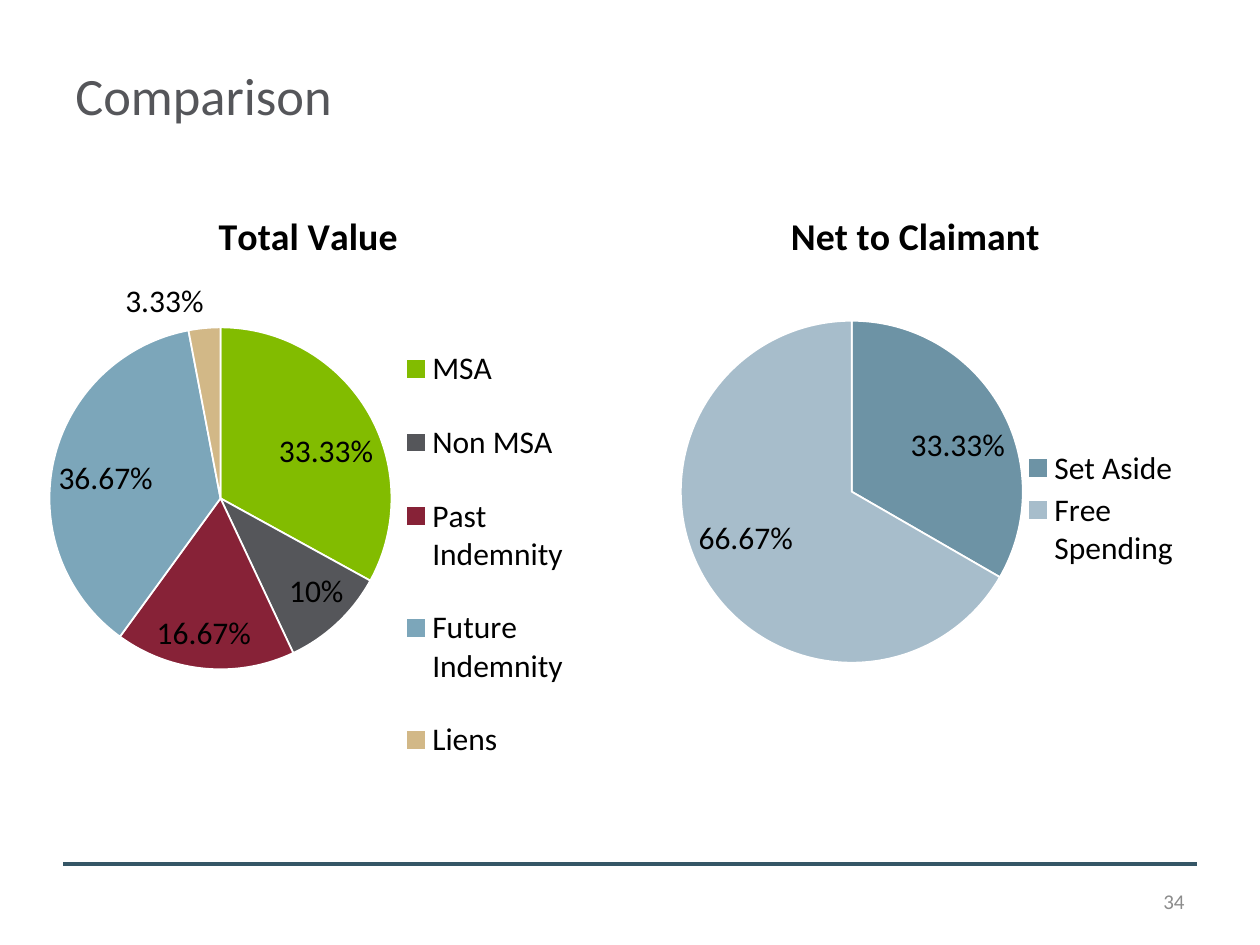
"""Build a slide that compares two settlement pies."""
import pptx
import pptx.chart.data
import pptx.dml.color
import pptx.enum.chart
import pptx.enum.shapes
import pptx.enum.text
import pptx.oxml
import pptx.oxml.ns
import pptx.util

WIDTH, HEIGHT = 10, 7.5
MARGIN = 0.5
FONT = "Calibri"
BEST_FIT = pptx.enum.chart.XL_LABEL_POSITION.BEST_FIT
TEXTS = [
    ("Comparison", (MARGIN, 0.3, WIDTH - 2 * MARGIN, 0.9), 30, "55565A", "LEFT"),
    ("34", (7.17, 6.95, 2.33, 0.4), 12, "8C8C8C", "RIGHT"),
]
PIES = [
    {
        "title": "Net to Claimant",
        "frame": (5.01, 1.45, 4.49, 5.22),
        "slices": [
            ("Set Aside", 0.3333, "6D93A5", None),
            ("Free Spending", 0.6667, "A7BDCB", None),
        ],
        "format": "0.00%",
        "title_layout": (0.27, 0.03),
        "plot_layout": (0.05, 0.21, 0.68, 0.52),
        "legend_layout": (0.7, 0.4, 0.26, 0.19),
    },
    {
        "title": "Total Value",
        "frame": (0.16, 1.45, 4.61, 5.22),
        "slices": [
            ("MSA", 33, "82BC00", "33.33%"),
            ("Non MSA", 10, "55565A", None),
            ("Past Indemnity", 17, "872237", "16.67%"),
            ("Future Indemnity", 37, "7CA6BA", "36.67%"),
            ("Liens", 3, "D2B887", "3.33%"),
        ],
        "format": '0"%"',
        "title_layout": (0.33, 0.03),
        "plot_layout": (0.04, 0.22, 0.61, 0.52),
        "legend_layout": (0.64, 0.2, 0.32, 0.73),
    },
]


def color(value):
    """Turn a hex string into a colour."""
    return pptx.dml.color.RGBColor.from_string(value)


def inches(values):
    """Convert several lengths in inches."""
    return [pptx.util.Inches(value) for value in values]


def set_font(font, size, value="000000", bold=False):
    """Set face, size, colour and weight of a font."""
    font.name = FONT
    font.size = pptx.util.Pt(size)
    font.bold = bold
    font.color.rgb = color(value)


def add_text(page, text, frame, size, value, alignment):
    """Add a one-line text box, centred vertically."""
    text_frame = page.shapes.add_textbox(*inches(frame)).text_frame
    text_frame.word_wrap = True
    text_frame.vertical_anchor = pptx.enum.text.MSO_ANCHOR.MIDDLE
    paragraph = text_frame.paragraphs[0]
    paragraph.text = text
    paragraph.alignment = getattr(pptx.enum.text.PP_ALIGN, alignment)
    set_font(paragraph.font, size, value)


def set_layout(chart, tag, index, shares, inner=False):
    """Place a chart part by shares of the chart's size."""
    part = chart.element.find(".//" + pptx.oxml.ns.qn(tag))
    for old in part.findall(pptx.oxml.ns.qn("c:layout")):
        part.remove(old)
    target = '<c:layoutTarget val="inner"/>' if inner else ""
    modes = '<c:xMode val="edge"/><c:yMode val="edge"/>'
    sizes = "".join(f'<c:{name} val="{share}"/>' for name, share in zip("xywh", shares))
    part.insert(index, pptx.oxml.parse_xml(
        f"<c:layout {pptx.oxml.ns.nsdecls('c')}><c:manualLayout>"
        f"{target}{modes}{sizes}</c:manualLayout></c:layout>"))


def style_slice(point, fill, text):
    """Colour a slice and give it its own label text, if any."""
    point.format.fill.solid()
    point.format.fill.fore_color.rgb = color(fill)
    point.format.line.color.rgb = color("FFFFFF")
    point.format.line.width = pptx.util.Pt(1)
    if text:
        paragraph = point.data_label.text_frame.paragraphs[0]
        paragraph.text = text
        set_font(paragraph.runs[0].font, 18)
        point.data_label.position = BEST_FIT


def add_pie(page, pie):
    """Add a pie chart with title, labels and legend."""
    names, values, fills, texts = zip(*pie["slices"])
    chart_data = pptx.chart.data.CategoryChartData()
    chart_data.categories = names
    chart_data.add_series(pie["title"], values)
    chart = page.shapes.add_chart(
        pptx.enum.chart.XL_CHART_TYPE.PIE, *inches(pie["frame"]), chart_data).chart
    set_font(chart.font, 18)

    chart.has_title = True
    paragraph = chart.chart_title.text_frame.paragraphs[0]
    paragraph.text = pie["title"]
    set_font(paragraph.font, 21.6, bold=True)
    chart.has_legend = True
    chart.legend.position = pptx.enum.chart.XL_LEGEND_POSITION.RIGHT
    chart.legend.include_in_layout = False
    set_font(chart.legend.font, 18)

    plot = chart.plots[0]
    plot.vary_by_categories = True
    series = plot.series[0]
    labels = series.data_labels
    labels.show_value = True
    labels.number_format = pie["format"]
    labels.number_format_is_linked = False
    labels.position = BEST_FIT
    set_font(labels.font, 18)
    for index, (fill, text) in enumerate(zip(fills, texts)):
        style_slice(series.points[index], fill, text)

    set_layout(chart, "c:title", 1, pie["title_layout"])
    set_layout(chart, "c:plotArea", 0, pie["plot_layout"], inner=True)
    set_layout(chart, "c:legend", 1, pie["legend_layout"])


def add_rule(page):
    """Draw the footer line between the margins."""
    rule = page.shapes.add_connector(
        pptx.enum.shapes.MSO_CONNECTOR.STRAIGHT,
        *inches((MARGIN, 6.86, WIDTH - MARGIN, 6.86)))
    rule.line.color.rgb = color("355666")
    rule.line.width = pptx.util.Pt(2.25)
    rule.element.spPr.append(
        pptx.oxml.parse_xml(f"<a:effectLst {pptx.oxml.ns.nsdecls('a')}/>"))


def main():
    """Build and save the deck."""
    deck = pptx.Presentation()
    deck.slide_width, deck.slide_height = inches((WIDTH, HEIGHT))
    page = deck.slides.add_slide(deck.slide_layouts[6])
    add_rule(page)
    for text in TEXTS:
        add_text(page, *text)
    for pie in PIES:
        add_pie(page, pie)
    deck.save("out.pptx")


if __name__ == "__main__":
    main()
